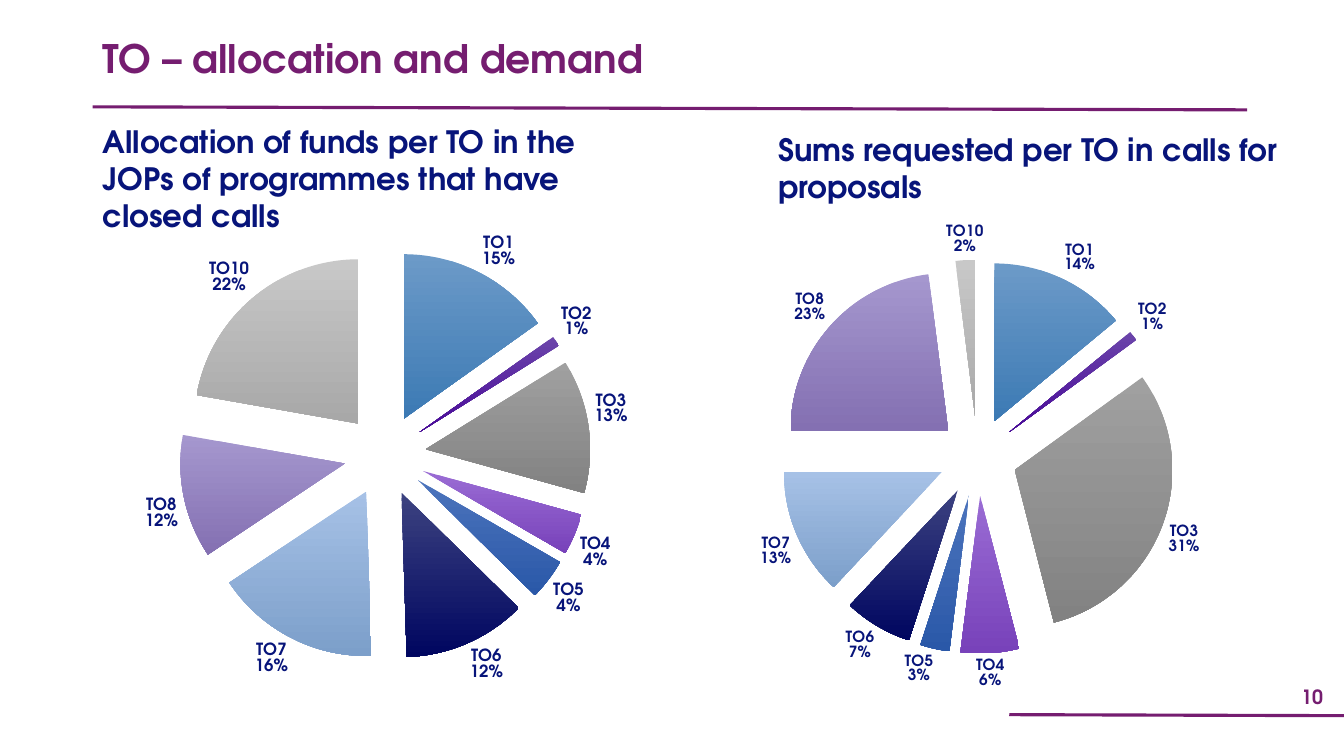
import pptx
import pptx.chart.data
import pptx.dml.color
import pptx.enum.chart
import pptx.enum.shapes
import pptx.enum.text
import pptx.oxml
import pptx.oxml.ns
import pptx.util

Inches = pptx.util.Inches
Pt = pptx.util.Pt
RGBColor = pptx.dml.color.RGBColor
ALIGN = pptx.enum.text.PP_ALIGN
ANCHOR = pptx.enum.text.MSO_ANCHOR

PURPLE = RGBColor(0x75, 0x1D, 0x70)
NAVY = RGBColor(0x07, 0x14, 0x7A)
FONT = "TeX Gyre Adventor"

RULES = [(0.92, 1.06, 12.37, 1.09), (10.01, 7.09, 13.35, 7.1)]
TEXTS = [
    ("TO – allocation and demand", (0.92, 0.34, 9.73, 0.65), 28, PURPLE, ALIGN.LEFT, ANCHOR.TOP),
    ("Allocation of funds per TO in the JOPs of programmes that have closed calls",
     (0.92, 1.16, 5.48, 1.21), 22, NAVY, ALIGN.LEFT, ANCHOR.BOTTOM),
    ("Sums requested per TO in calls for proposals",
     (7.62, 1.24, 5.55, 0.84), 22, NAVY, ALIGN.LEFT, ANCHOR.BOTTOM),
    ("10", (12.7, 6.73, 0.63, 0.36), 14, PURPLE, ALIGN.CENTER, ANCHOR.MIDDLE),
]
OBJECTIVES = ["TO1", "TO2", "TO3", "TO4", "TO5", "TO6", "TO7", "TO8", "TO10"]
PIES = [
    ((6.26, 2.09, 6.9, 4.88), [14, 1, 31, 6, 3, 7, 13, 23, 2], 11),
    ((0.92, 2.09, 5.81, 4.88), [15, 1, 13, 4, 4, 12, 16, 12, 22], 12),
]
SLICE_GRADIENTS = [
    (RGBColor(0x6C, 0x9A, 0xC8), RGBColor(0x3C, 0x7A, 0xB4)),
    (RGBColor(0x6B, 0x45, 0xAA), RGBColor(0x48, 0x08, 0x98)),
    (RGBColor(0xA0, 0xA0, 0xA0), RGBColor(0x82, 0x82, 0x82)),
    (RGBColor(0x9A, 0x6C, 0xD4), RGBColor(0x78, 0x42, 0xBA)),
    (RGBColor(0x4C, 0x74, 0xBC), RGBColor(0x2A, 0x58, 0xA8)),
    (RGBColor(0x3C, 0x42, 0x80), RGBColor(0x00, 0x06, 0x60)),
    (RGBColor(0xA6, 0xC1, 0xE6), RGBColor(0x7C, 0x9F, 0xCA)),
    (RGBColor(0xA5, 0x97, 0xCE), RGBColor(0x84, 0x70, 0xB2)),
    (RGBColor(0xC8, 0xC8, 0xC8), RGBColor(0xA8, 0xA8, 0xA8)),
]
EXPLOSION = 25


def add_rule(page, ends):
    rule = page.shapes.add_connector(
        pptx.enum.shapes.MSO_CONNECTOR.STRAIGHT, *map(Inches, ends))
    rule.line.color.rgb = PURPLE
    rule.line.width = Pt(2.25)
    properties = rule._element.spPr
    properties.append(properties.makeelement(pptx.oxml.ns.qn("a:effectLst"), {}))


def add_text(page, text, place, size, color, align, anchor):
    box = page.shapes.add_textbox(*map(Inches, place))
    frame = box.text_frame
    frame.word_wrap = True
    frame.vertical_anchor = anchor
    para = frame.paragraphs[0]
    para.text = text
    para.alignment = align
    if size == 28:
        para.line_spacing = 0.9
    style_font(para.font, size, color)


def style_font(font, size, color):
    font.name = FONT
    font.size = Pt(size)
    font.bold = True
    font.color.rgb = color


def add_pie(page, place, shares, label_size):
    data = pptx.chart.data.CategoryChartData()
    data.categories = OBJECTIVES
    data.add_series("Series 1", shares)
    chart = page.shapes.add_chart(
        pptx.enum.chart.XL_CHART_TYPE.PIE, *map(Inches, place), data).chart
    chart.has_legend = False
    chart.has_title = False
    chart.font.name = "TeX Gyre Pagella"
    chart.font.size = Pt(10)
    chart.font.color.rgb = NAVY

    plot = chart.plots[0]
    plot.vary_by_categories = True
    series = plot.series[0]
    for index, shades in enumerate(SLICE_GRADIENTS):
        fill = series.points[index].format.fill
        fill.gradient()
        fill.gradient_angle = 270
        for stop, shade in zip(fill.gradient_stops, shades):
            stop.color.rgb = shade
    qn = pptx.oxml.ns.qn
    first_point = series._element.find(qn("c:dPt"))
    first_point.addprevious(
        first_point.makeelement(qn("c:explosion"), {"val": str(EXPLOSION)}))

    labels = series.data_labels
    labels.show_category_name = True
    labels.show_percentage = True
    labels.show_value = False
    labels.number_format = "0%"
    labels.number_format_is_linked = False
    labels.position = pptx.enum.chart.XL_LABEL_POSITION.OUTSIDE_END
    style_font(labels.font, label_size, NAVY)
    percentage = labels._element.find(qn("c:showPercent"))
    bubble = labels._element.find(qn("c:showBubbleSize"))
    last_flag = percentage if bubble is None else bubble
    separator = last_flag.makeelement(qn("c:separator"), {})
    separator.text = "\n"
    last_flag.addnext(separator)


def main():
    deck = pptx.Presentation()
    deck.slide_width = Inches(13.33)
    deck.slide_height = Inches(7.5)
    page = deck.slides.add_slide(deck.slide_layouts[6])
    for ends in RULES:
        add_rule(page, ends)
    for entry in TEXTS:
        add_text(page, *entry)
    for pie in PIES:
        add_pie(page, *pie)
    deck.save("out.pptx")


if __name__ == "__main__":
    main()
